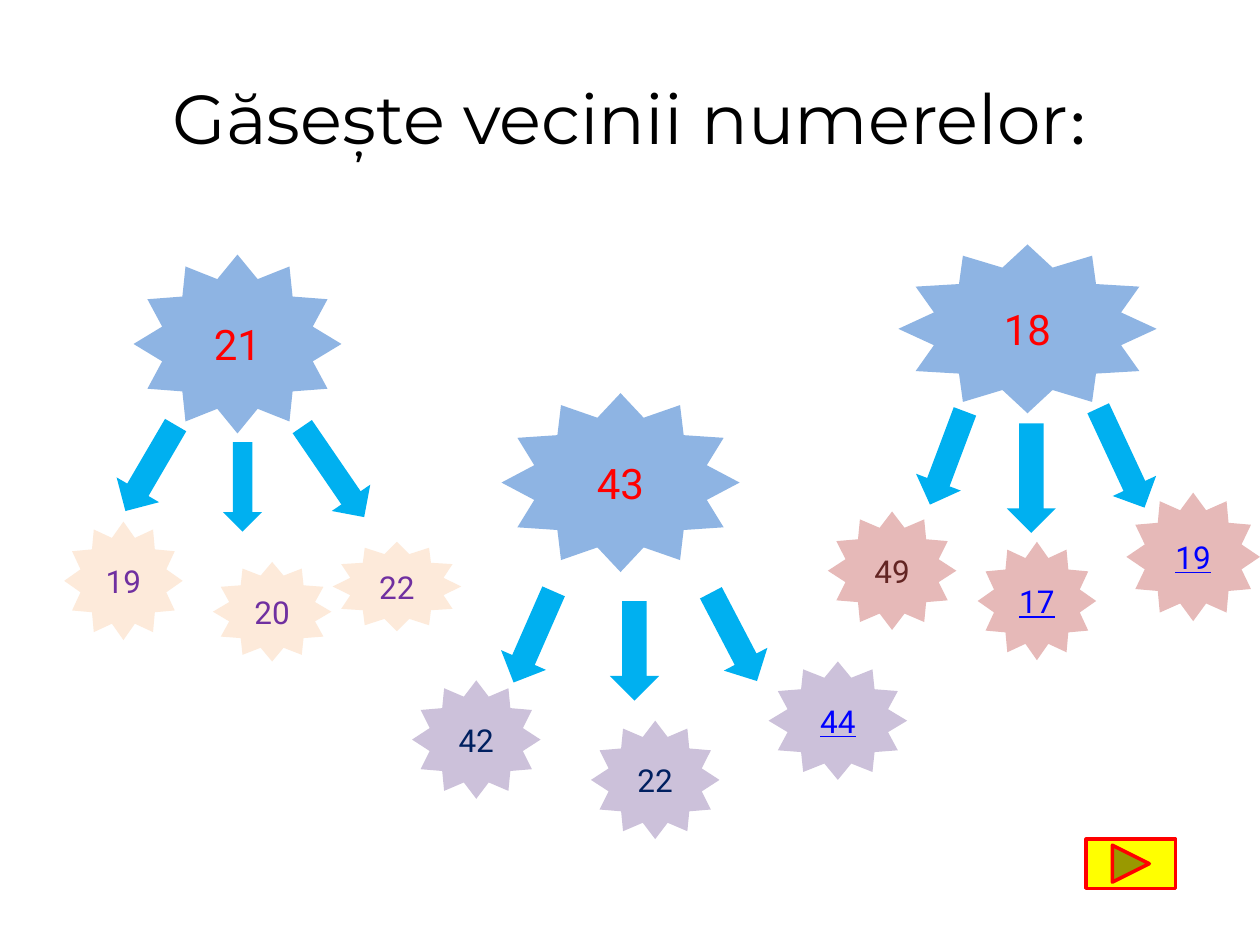
from dataclasses import dataclass

from pptx import Presentation
from pptx.dml.color import RGBColor
from pptx.enum.shapes import MSO_SHAPE as Preset
from pptx.enum.text import MSO_ANCHOR as Anchor, PP_ALIGN as Align
from pptx.util import Inches, Pt

Box = tuple[float, float, float, float]

BLACK = RGBColor(0x00, 0x00, 0x00)
RED = RGBColor(0xFF, 0x00, 0x00)
YELLOW = RGBColor(0xFF, 0xFF, 0x00)
SKY = RGBColor(0x00, 0xB0, 0xF0)
BLUE = RGBColor(0x8E, 0xB4, 0xE3)
PEACH = RGBColor(0xFD, 0xEA, 0xDA)
LILAC = RGBColor(0xCC, 0xC1, 0xDA)
ROSE = RGBColor(0xE6, 0xB9, 0xB8)
PURPLE = RGBColor(0x70, 0x30, 0xA0)
NAVY = RGBColor(0x00, 0x20, 0x60)
MAROON = RGBColor(0x63, 0x25, 0x23)
LINK_BLUE = RGBColor(0x00, 0x00, 0xFF)


@dataclass
class Arrow:
    box: Box
    rotation: float = 0


@dataclass
class Star:
    text: str
    box: Box
    underline: bool = False


@dataclass
class Group:
    number: Star
    arrows: list[Arrow]
    answers: list[Star]
    fill: RGBColor
    color: RGBColor


GROUPS = [
    Group(
        Star("21", (1.06, 2.02, 1.65, 1.42)),
        [Arrow((1, 3.32, 0.39, 0.79), 30.3), Arrow((1.77, 3.51, 0.31, 0.71)),
         Arrow((2.46, 3.31, 0.37, 0.87), 325.6)],
        [Star("19", (0.51, 4.14, 0.94, 0.94)), Star("20", (1.69, 4.46, 0.94, 0.79)),
         Star("22", (2.64, 4.3, 1.02, 0.71))],
        PEACH, PURPLE,
    ),
    Group(
        Star("43", (3.98, 3.12, 1.89, 1.42)),
        [Arrow((4.04, 4.66, 0.39, 0.79), 23.7), Arrow((4.84, 4.77, 0.39, 0.79)),
         Arrow((5.63, 4.66, 0.39, 0.79), 332.4)],
        [Star("42", (3.27, 5.4, 1.02, 0.94)), Star("22", (4.69, 5.72, 1.02, 0.94)),
         Star("44", (6.1, 5.25, 1.1, 0.94), True)],
        LILAC, NAVY,
    ),
    Group(
        Star("18", (7.13, 1.94, 2.05, 1.34)),
        [Arrow((7.33, 3.24, 0.38, 0.79), 20.6), Arrow((7.99, 3.36, 0.39, 0.87)),
         Arrow((8.71, 3.2, 0.38, 0.87), 335)],
        [Star("49", (6.57, 4.06, 1.02, 0.94)), Star("17", (7.76, 4.3, 0.94, 0.94), True),
         Star("19", (8.94, 3.91, 1.06, 1.02), True)],
        ROSE, MAROON,
    ),
]


def add_text(paragraph, text: str, *, size: float, color: RGBColor,
             font: str = "Roboto", underline: bool = False) -> None:
    """Append a formatted run to a centred paragraph."""
    paragraph.alignment = Align.CENTER
    run = paragraph.add_run()
    run.text = text
    run.font.size = Pt(size)
    run.font.name = font
    run.font.color.rgb = color
    if underline:
        run.font.underline = True


def add_preset(slide, preset: Preset, box: Box, fill: RGBColor):
    """Add a flat, filled preset shape without an outline."""
    shape = slide.shapes.add_shape(preset, *map(Inches, box))
    shape.shadow.inherit = False
    shape.fill.solid()
    shape.fill.fore_color.rgb = fill
    shape.line.fill.background()
    return shape


def add_star(slide, star: Star, fill: RGBColor, color: RGBColor, size: float) -> None:
    """Add a twelve-pointed star holding a number."""
    shape = add_preset(slide, Preset.STAR_12_POINT, star.box, fill)
    shape.text_frame.vertical_anchor = Anchor.MIDDLE
    add_text(shape.text_frame.paragraphs[0], star.text, size=size,
             color=LINK_BLUE if star.underline else color, underline=star.underline)


def add_group(slide, group: Group) -> None:
    """Add a number, its arrows and its possible neighbours."""
    add_star(slide, group.number, BLUE, RED, 24)
    for arrow in group.arrows:
        add_preset(slide, Preset.DOWN_ARROW, arrow.box, SKY).rotation = arrow.rotation
    for answer in group.answers:
        add_star(slide, answer, group.fill, group.color, 18)


def add_title(slide) -> None:
    """Place and fill the title placeholder."""
    title = slide.shapes.title
    title.left, title.top, title.width, title.height = map(Inches, (0.5, 0.3, 9, 1.25))
    title.text_frame.vertical_anchor = Anchor.MIDDLE
    paragraph = title.text_frame.paragraphs[0]
    add_text(paragraph, "Găsește vecinii numerelor", size=39.6, color=BLACK, font="Montserrat")
    add_text(paragraph, ":", size=39.6, color=BLACK, font="Calibri")


def main() -> None:
    """Build and save the slide."""
    presentation = Presentation()
    presentation.slide_width, presentation.slide_height = Inches(10), Inches(7.5)
    slide = presentation.slides.add_slide(presentation.slide_layouts[5])
    add_title(slide)
    for group in GROUPS:
        add_group(slide, group)
    button = add_preset(slide, Preset.ACTION_BUTTON_FORWARD_OR_NEXT,
                        (8.62, 6.66, 0.71, 0.39), YELLOW)
    button.line.color.rgb = RED
    button.line.width = Pt(2)
    presentation.save("out.pptx")


if __name__ == "__main__":
    main()
